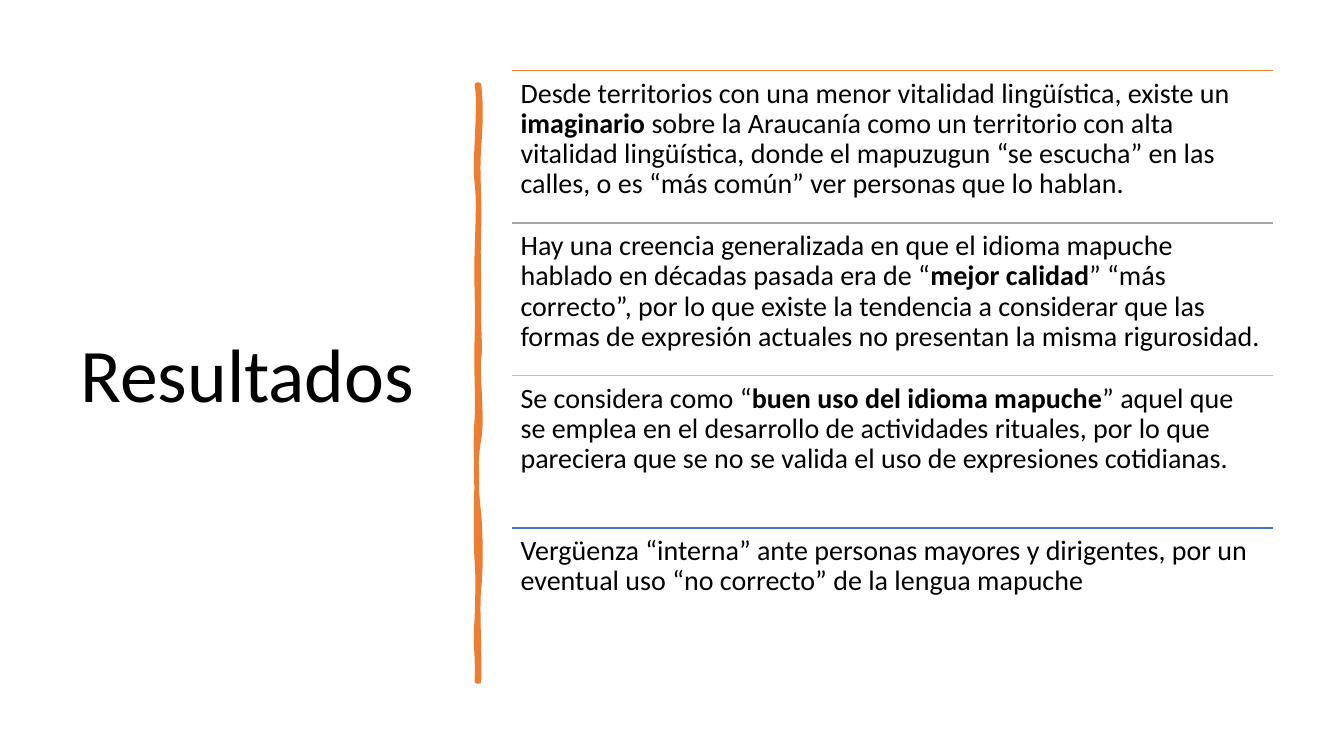
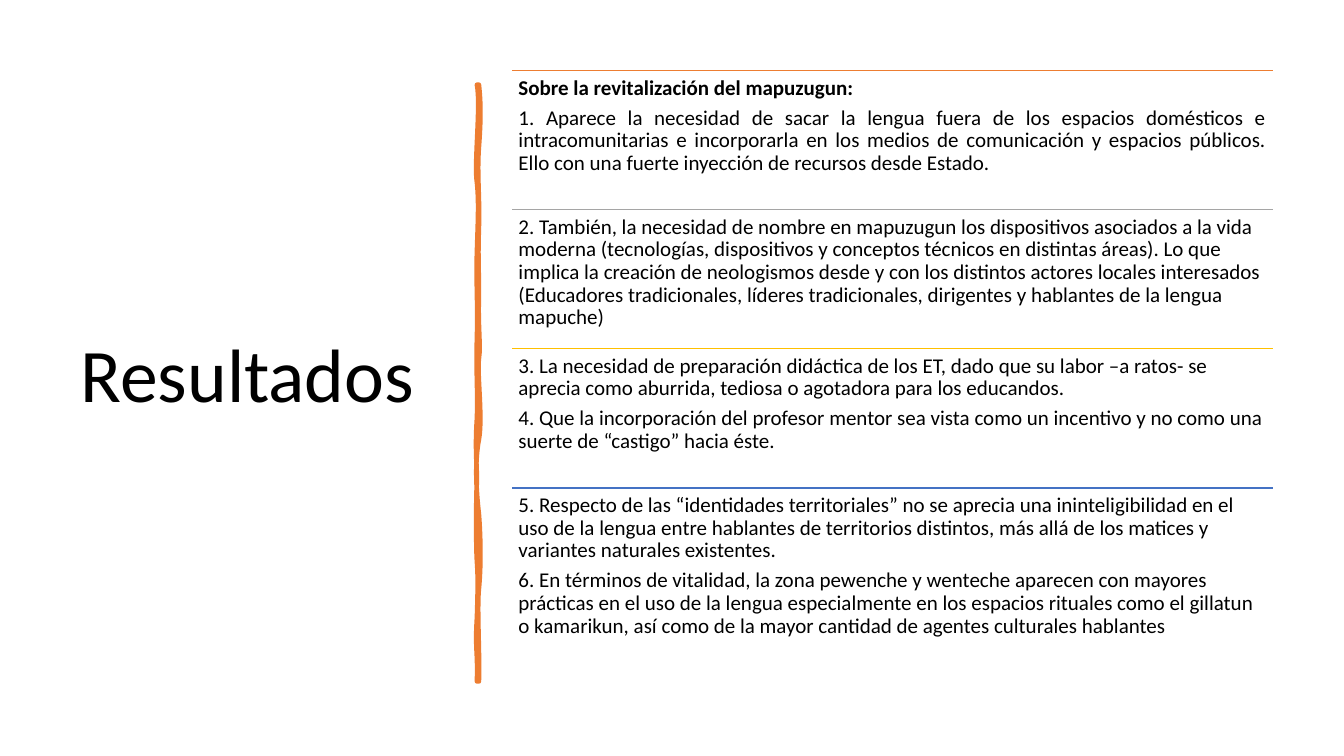
import dataclasses
import itertools
import typing

import lxml.etree
import pptx
import pptx.dml.color
import pptx.enum.shapes
import pptx.enum.text
import pptx.oxml.ns
import pptx.util

Inches = pptx.util.Inches
Pt = pptx.util.Pt
qn = pptx.oxml.ns.qn
LEFT = pptx.enum.text.PP_ALIGN.LEFT
JUSTIFY = pptx.enum.text.PP_ALIGN.JUSTIFY


@dataclasses.dataclass(frozen=True)
class Theme:
    font: str = "Calibri"
    background: str = "FFFFFF"
    text: str = "000000"
    brush: str = "ED7D31"
    rules: tuple = ("ED7D31", "A5A5A5", "FFC000", "4472C4")
    title_size: float = 54
    brush_width: float = 3.25
    rule_width: float = 1
    line_spacing: float = 0.9
    space_after: float = 0.35  # share of the type size
    row_inset: float = 0.3  # share of the type size


class Paragraph(typing.NamedTuple):
    text: str  # words between asterisks are bold
    align: int = LEFT


class Section(typing.NamedTuple):
    size: float
    pitch: float
    rows: list


ROWS_LEFT, ROWS_TOP, ROWS_BOTTOM = 5.08, 0.7, 6.75
RULE_WIDTH, ROW_TEXT_WIDTH = 7.55, 7.54

# Bézier outline of the brush stroke: a start, then two handles and an end per curve
BRUSH_START = (4.75, 0.84)
BRUSH_CURVES = [
    ((4.77, 1.02), (4.77, 1.19), (4.75, 1.46)),
    ((4.73, 1.73), (4.76, 1.95), (4.75, 2.26)),
    ((4.74, 2.57), (4.75, 2.62), (4.75, 2.94)),
    ((4.74, 3.25), (4.77, 3.42), (4.75, 3.56)),
    ((4.73, 3.7), (4.79, 4.14), (4.75, 4.36)),
    ((4.71, 4.57), (4.72, 4.84), (4.75, 5.1)),
    ((4.77, 5.36), (4.77, 5.64), (4.75, 5.84)),
    ((4.73, 6.03), (4.76, 6.5), (4.75, 6.76)),
    ((4.74, 6.76), (4.73, 6.76), (4.73, 6.76)),
    ((4.74, 6.46), (4.71, 6.44), (4.73, 6.13)),
    ((4.74, 5.83), (4.74, 5.7), (4.73, 5.57)),
    ((4.72, 5.44), (4.72, 4.95), (4.73, 4.77)),
    ((4.73, 4.59), (4.71, 4.45), (4.73, 4.15)),
    ((4.74, 3.86), (4.72, 3.73), (4.73, 3.35)),
    ((4.74, 2.98), (4.72, 2.81), (4.73, 2.5)),
    ((4.74, 2.18), (4.75, 2), (4.73, 1.81)),
    ((4.7, 1.63), (4.77, 1.04), (4.73, 0.84)),
]

SECTIONS = [
    Section(20, (ROWS_BOTTOM - ROWS_TOP) / 4, [
        [Paragraph("Desde territorios con una menor vitalidad lingüística, existe un *imaginario* sobre la "
                   "Araucanía como un territorio con alta vitalidad lingüística, donde el mapuzugun “se "
                   "escucha” en las calles, o es “más común” ver personas que lo hablan.")],
        [Paragraph("Hay una creencia generalizada en que el idioma mapuche hablado en décadas pasada era de "
                   "“*mejor calidad*” “más correcto”, por lo que existe la tendencia a considerar que las "
                   "formas de expresión actuales no presentan la misma rigurosidad.")],
        [Paragraph("Se considera como “*buen uso del idioma mapuche*” aquel que se emplea en el desarrollo de "
                   "actividades rituales, por lo que pareciera que se no se valida el uso de expresiones "
                   "cotidianas.")],
        [Paragraph("Vergüenza “interna” ante personas mayores y dirigentes, por un eventual uso “no correcto” "
                   "de la lengua mapuche")],
    ]),
    Section(15, 1.38, [
        [Paragraph("*Sobre la revitalización del mapuzugun:*"),
         Paragraph("1. Aparece la necesidad de sacar la lengua fuera de los espacios domésticos e "
                   "intracomunitarias e incorporarla en los medios de comunicación y espacios públicos. Ello "
                   "con una fuerte inyección de recursos desde Estado.", JUSTIFY)],
        [Paragraph("2. También, la necesidad de nombre en mapuzugun los dispositivos asociados a la vida "
                   "moderna (tecnologías, dispositivos y conceptos técnicos en distintas áreas). Lo que "
                   "implica la creación de neologismos desde y con los distintos actores locales interesados "
                   "(Educadores tradicionales, líderes tradicionales, dirigentes y hablantes de la lengua "
                   "mapuche)")],
        [Paragraph("3. La necesidad de preparación didáctica de los ET, dado que su labor –a ratos- se "
                   "aprecia como aburrida, tediosa o agotadora para los educandos."),
         Paragraph("4. Que la incorporación del profesor mentor sea vista como un incentivo y no como una "
                   "suerte de “castigo” hacia éste.")],
        [Paragraph("5. Respecto de las “identidades territoriales” no se aprecia una ininteligibilidad en el "
                   "uso de la lengua entre hablantes de territorios distintos, más allá de los matices y "
                   "variantes naturales existentes."),
         Paragraph("6. En términos de vitalidad, la zona pewenche y wenteche aparecen con mayores prácticas "
                   "en el uso de la lengua especialmente en los espacios rituales como el gillatun o "
                   "kamarikun, así como de la mayor cantidad de agentes culturales hablantes")],
    ]),
]


def rgb(code):
    return pptx.dml.color.RGBColor.from_string(code)


def bend_segments(shape, curves):
    """Turn the straight segments of a freeform into cubic Bézier curves."""
    for segment, curve in zip(list(shape._element.iter(qn("a:lnTo"))), curves):
        bend = lxml.etree.Element(qn("a:cubicBezTo"))
        for x, y in curve:
            lxml.etree.SubElement(bend, qn("a:pt"), x=str(Inches(x) - shape.left),
                                  y=str(Inches(y) - shape.top))
        segment.getparent().replace(segment, bend)


class Deck:
    def __init__(self, theme):
        self.theme = theme
        self.presentation = pptx.Presentation()
        self.presentation.slide_width = Inches(13.33)
        self.presentation.slide_height = Inches(7.5)
        self.slide = None

    def add_slide(self):
        self.slide = self.presentation.slides.add_slide(self.presentation.slide_layouts[6])
        fill = self.slide.background.fill
        fill.solid()
        fill.fore_color.rgb = rgb(self.theme.background)

    def text(self, left, top, width, height, paragraphs, size, inset=7.2, space_after=0,
             anchor=pptx.enum.text.MSO_ANCHOR.TOP):
        """Add a text box; inset and space_after are in points."""
        box = self.slide.shapes.add_textbox(Inches(left), Inches(top), Inches(width), Inches(height))
        frame = box.text_frame
        frame.word_wrap = True
        frame.vertical_anchor = anchor
        frame.margin_left = frame.margin_right = Pt(inset)
        frame.margin_top = frame.margin_bottom = Pt(inset)
        for index, content in enumerate(paragraphs):
            line = frame.paragraphs[0] if index == 0 else frame.add_paragraph()
            line.alignment = content.align
            line.line_spacing = self.theme.line_spacing
            line.space_after = Pt(space_after)
            line.font.name = self.theme.font
            line.font.size = Pt(size)
            line.font.color.rgb = rgb(self.theme.text)
            for words, bold in zip(content.text.split("*"), itertools.cycle((False, True))):
                if words:
                    run = line.add_run()
                    run.text = words
                    if bold:
                        run.font.bold = True

    def title(self, words):
        self.text(0.7, 0.69, 3.74, 6.11, [Paragraph(words)], self.theme.title_size,
                  anchor=pptx.enum.text.MSO_ANCHOR.MIDDLE)

    def brush_stroke(self):
        ends = [(Inches(x), Inches(y)) for _, _, (x, y) in BRUSH_CURVES]
        builder = self.slide.shapes.build_freeform(*(Inches(value) for value in BRUSH_START))
        builder.add_line_segments(ends, close=True)
        stroke = builder.convert_to_shape()
        bend_segments(stroke, BRUSH_CURVES)
        stroke.shadow.inherit = False
        stroke.fill.solid()
        stroke.fill.fore_color.rgb = rgb(self.theme.brush)
        stroke.line.color.rgb = rgb(self.theme.brush)
        stroke.line.width = Pt(self.theme.brush_width)

    def rule(self, left, top, width, color):
        rule = self.slide.shapes.add_connector(
            pptx.enum.shapes.MSO_CONNECTOR.STRAIGHT,
            Inches(left), Inches(top), Inches(left + width), Inches(top))
        rule.line.color.rgb = rgb(color)
        rule.line.width = Pt(self.theme.rule_width)
        lxml.etree.SubElement(rule._element.spPr, qn("a:effectLst"))

    def rows(self, section):
        """Stack the ruled paragraphs; the last row runs down to the common bottom."""
        for index, (color, paragraphs) in enumerate(zip(self.theme.rules, section.rows)):
            top = ROWS_TOP + index * section.pitch
            last = index == len(section.rows) - 1
            height = ROWS_BOTTOM - top if last else section.pitch
            self.rule(ROWS_LEFT, top, RULE_WIDTH, color)
            self.text(ROWS_LEFT, top, ROW_TEXT_WIDTH, height, paragraphs, section.size,
                      self.theme.row_inset * section.size, self.theme.space_after * section.size)


def main():
    deck = Deck(Theme())
    for section in SECTIONS:
        deck.add_slide()
        deck.title("Resultados")
        deck.brush_stroke()
        deck.rows(section)
    deck.presentation.save("out.pptx")


if __name__ == "__main__":
    main()
